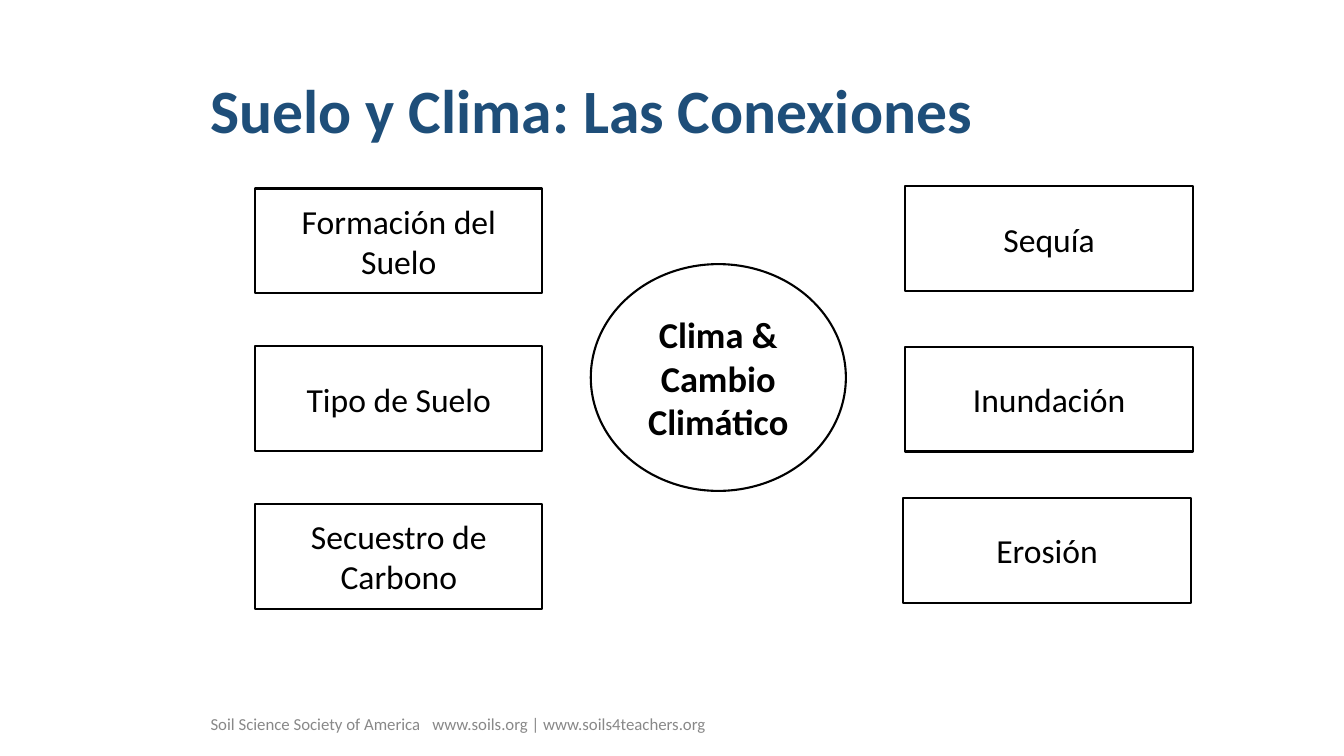
from lxml.etree import SubElement
from pptx import Presentation
from pptx.dml.color import RGBColor
from pptx.enum.shapes import MSO_SHAPE
from pptx.enum.text import MSO_ANCHOR, MSO_AUTO_SIZE, PP_ALIGN
from pptx.oxml.ns import qn
from pptx.util import Inches, Pt

COLORS = {"title": "1E4E79", "ink": "000000", "paper": "FFFFFF", "footer": "888888"}
BOX_WIDTH, BOX_HEIGHT = 2.85, 1.04
SOIL_LEFT, SOIL_TOP, SOIL_PITCH = 2.53, 1.87, 1.565
SOIL_TOPICS = ["Formación del Suelo", "Tipo de Suelo", "Secuestro de Carbono"]
CLIMATE_EFFECTS = [
    ("Sequía", 8.98, 1.85),
    ("Inundación", 8.98, 3.44),
    ("Erosión", 8.96, 4.94),
]


def color(name):
    return RGBColor.from_string(COLORS[name])


def write(frame, text, size, ink="ink", bold=False, align=PP_ALIGN.LEFT,
          margin=0.05, line_spacing=1.0, tab=None):
    frame.word_wrap = True
    frame.auto_size = MSO_AUTO_SIZE.NONE
    frame.vertical_anchor = MSO_ANCHOR.MIDDLE
    frame.margin_left = frame.margin_right = Inches(0.1)
    frame.margin_top = frame.margin_bottom = Inches(margin)
    paragraph = frame.paragraphs[0]
    paragraph.alignment = align
    paragraph.line_spacing = line_spacing
    if tab:
        stops = SubElement(paragraph._p.get_or_add_pPr(), qn("a:tabLst"))
        SubElement(stops, qn("a:tab"), pos=str(Inches(tab)), algn="l")
    run = paragraph.add_run()
    run.text = text
    font = run.font
    font.name, font.size, font.bold = "Calibri", Pt(size), bold
    font.color.rgb = color(ink)


class ConnectionsSlide:
    """Builds the slide's title, outlined topics and footer in one style."""

    def __init__(self, deck):
        self.slide = deck.slides.add_slide(deck.slide_layouts[5])

    def title(self, text, left, top, width, height):
        heading = self.slide.shapes.title
        heading.left, heading.top = Inches(left), Inches(top)
        heading.width, heading.height = Inches(width), Inches(height)
        write(heading.text_frame, text, 44, ink="title", bold=True, line_spacing=0.9)

    def topic(self, text, left, top, width=BOX_WIDTH, height=BOX_HEIGHT,
              outline=MSO_SHAPE.RECTANGLE, size=24, bold=False):
        topic = self.slide.shapes.add_shape(
            outline, Inches(left), Inches(top), Inches(width), Inches(height))
        topic.shadow.inherit = False
        topic.fill.solid()
        topic.fill.fore_color.rgb = color("paper")
        topic.line.color.rgb = color("ink")
        topic.line.width = Pt(1.5)
        write(topic.text_frame, text, size, bold=bold, align=PP_ALIGN.CENTER, margin=0.1)

    def footer(self, text, left, top, width, height, tab):
        footer = self.slide.shapes.add_textbox(
            Inches(left), Inches(top), Inches(width), Inches(height))
        write(footer.text_frame, text, 12, ink="footer", tab=tab)


def main():
    deck = Presentation()
    deck.slide_width, deck.slide_height = Inches(13.33), Inches(7.5)
    connections = ConnectionsSlide(deck)
    connections.title("Suelo y Clima: Las Conexiones", 1.99, 0.4, 10.43, 1.45)
    connections.topic("Clima & Cambio Climático", 5.86, 2.62, 2.53, 2.25,
                      outline=MSO_SHAPE.OVAL, size=26, bold=True)
    for row, soil_topic in enumerate(SOIL_TOPICS):
        connections.topic(soil_topic, SOIL_LEFT, SOIL_TOP + row * SOIL_PITCH)
    for effect, left, top in CLIMATE_EFFECTS:
        connections.topic(effect, left, top)
    connections.footer(
        "Soil Science Society of America\twww.soils.org | www.soils4teachers.org",
        1.99, 7.02, 6.66, 0.33, tab=2.2)
    deck.save("out.pptx")


if __name__ == "__main__":
    main()
